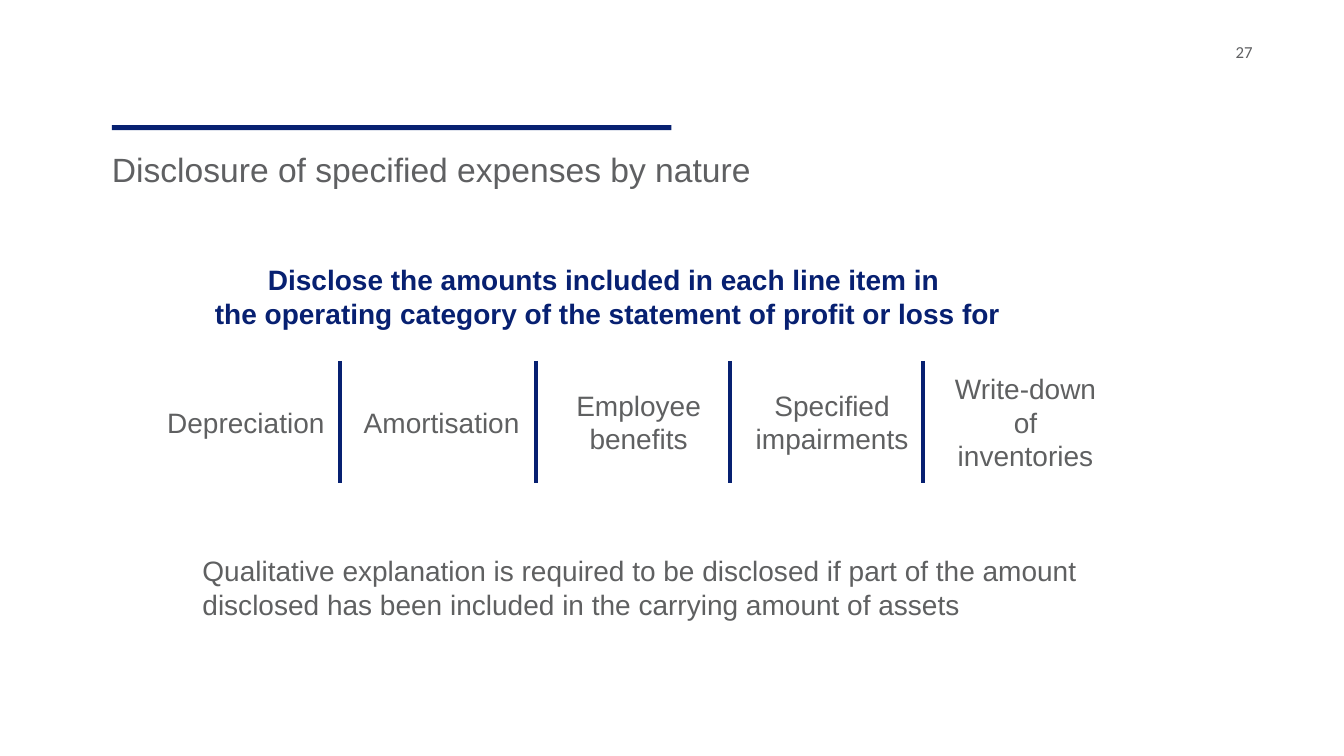
from dataclasses import dataclass

from lxml.etree import SubElement
from pptx import Presentation
from pptx.dml.color import RGBColor
from pptx.enum.shapes import MSO_CONNECTOR, MSO_SHAPE
from pptx.enum.text import MSO_ANCHOR, MSO_AUTO_SIZE, PP_ALIGN
from pptx.oxml.ns import qn
from pptx.shapes.base import BaseShape
from pptx.slide import Slide
from pptx.util import Pt

NAVY = "072071"
GREY = "5F6061"
NUMBER_GREY = "5F6062"
EXPENSE_TOP = 257.8
EXPENSE_WIDTH = 130.3
EXPENSE_HEIGHT = 87.1


@dataclass(frozen=True)
class Box:
    left: float
    top: float
    width: float
    height: float


@dataclass(frozen=True)
class TextStyle:
    size: float = 20
    color: str = GREY
    font: str = "Arial"
    bold: bool = False
    align: PP_ALIGN = PP_ALIGN.LEFT
    anchor: MSO_ANCHOR = MSO_ANCHOR.MIDDLE


@dataclass(frozen=True)
class Expense:
    label: str
    left: float
    align: PP_ALIGN = PP_ALIGN.CENTER


EXPENSES = [
    Expense("Depreciation", 112.3, PP_ALIGN.LEFT),
    Expense("Amortisation", 252.7, PP_ALIGN.LEFT),
    Expense("Employee benefits", 391),
    Expense("Specified impairments", 529.2),
    Expense("Write-down of inventories", 667.4),
]


def hex_color(value: str) -> RGBColor:
    return RGBColor.from_string(value)


def place(shape: BaseShape, box: Box) -> None:
    shape.left, shape.top = Pt(box.left), Pt(box.top)
    shape.width, shape.height = Pt(box.width), Pt(box.height)


def write_text(shape: BaseShape, lines: list[str], style: TextStyle) -> None:
    frame = shape.text_frame
    frame.word_wrap = True
    frame.auto_size = MSO_AUTO_SIZE.NONE
    frame.vertical_anchor = style.anchor
    paragraph = frame.paragraphs[0]
    paragraph.alignment = style.align
    for index, line in enumerate(lines):
        if index:
            paragraph.add_line_break()
        run = paragraph.add_run()
        run.text = line
        run.font.name = style.font
        run.font.size = Pt(style.size)
        run.font.bold = style.bold
        run.font.color.rgb = hex_color(style.color)


def add_text(slide: Slide, box: Box, lines: list[str], style: TextStyle) -> BaseShape:
    shape = slide.shapes.add_textbox(0, 0, 0, 0)
    place(shape, box)
    write_text(shape, lines, style)
    return shape


def add_rectangle(slide: Slide, box: Box, color: str) -> BaseShape:
    shape = slide.shapes.add_shape(MSO_SHAPE.RECTANGLE, 0, 0, 0, 0)
    place(shape, box)
    shape.shadow.inherit = False
    shape.fill.solid()
    shape.fill.fore_color.rgb = hex_color(color)
    shape.line.fill.background()
    return shape


def add_separator(slide: Slide, left: float) -> None:
    connector = slide.shapes.add_connector(
        MSO_CONNECTOR.STRAIGHT,
        Pt(left), Pt(EXPENSE_TOP), Pt(left), Pt(EXPENSE_TOP + EXPENSE_HEIGHT),
    )
    connector.line.color.rgb = hex_color(NAVY)
    connector.line.width = Pt(3)
    SubElement(connector._element.spPr, qn("a:effectLst"))


def main() -> None:
    presentation = Presentation()
    presentation.slide_width, presentation.slide_height = Pt(960), Pt(540)
    slide = presentation.slides.add_slide(presentation.slide_layouts[5])

    add_rectangle(slide, Box(80, 89.3, 399.6, 3.6), "072171")

    number = add_text(
        slide, Box(882.7, 29.5, 48.2, 20.9), ["27"],
        TextStyle(12, NUMBER_GREY, "Calibri", anchor=MSO_ANCHOR.TOP),
    )
    frame = number.text_frame
    frame.margin_left = frame.margin_top = frame.margin_right = frame.margin_bottom = 0

    title = slide.shapes.title
    place(title, Box(72.7, 103, 800.6, 60.5))
    write_text(
        title, ["Disclosure of specified expenses by nature"],
        TextStyle(24, NUMBER_GREY, anchor=MSO_ANCHOR.TOP),
    )

    add_text(
        slide, Box(91.4, 181.4, 685.4, 60.5),
        [
            "Disclose the amounts included in each line item in ",
            "the operating category of the statement of profit or loss for",
        ],
        TextStyle(color=NAVY, bold=True, align=PP_ALIGN.CENTER),
    )

    explanation = add_rectangle(slide, Box(137.5, 387.4, 685.4, EXPENSE_HEIGHT), "FFFFFF")
    write_text(
        explanation,
        [
            "Qualitative explanation is required to be disclosed if part of the amount "
            "disclosed has been included in the carrying amount of assets"
        ],
        TextStyle(anchor=MSO_ANCHOR.TOP),
    )
    explanation.text_frame.margin_top = Pt(8)

    for index, expense in enumerate(EXPENSES):
        add_text(
            slide, Box(expense.left, EXPENSE_TOP, EXPENSE_WIDTH, EXPENSE_HEIGHT),
            [expense.label], TextStyle(align=expense.align),
        )
        if index < len(EXPENSES) - 1:
            add_separator(slide, expense.left + EXPENSE_WIDTH)

    presentation.save("out.pptx")


if __name__ == "__main__":
    main()
